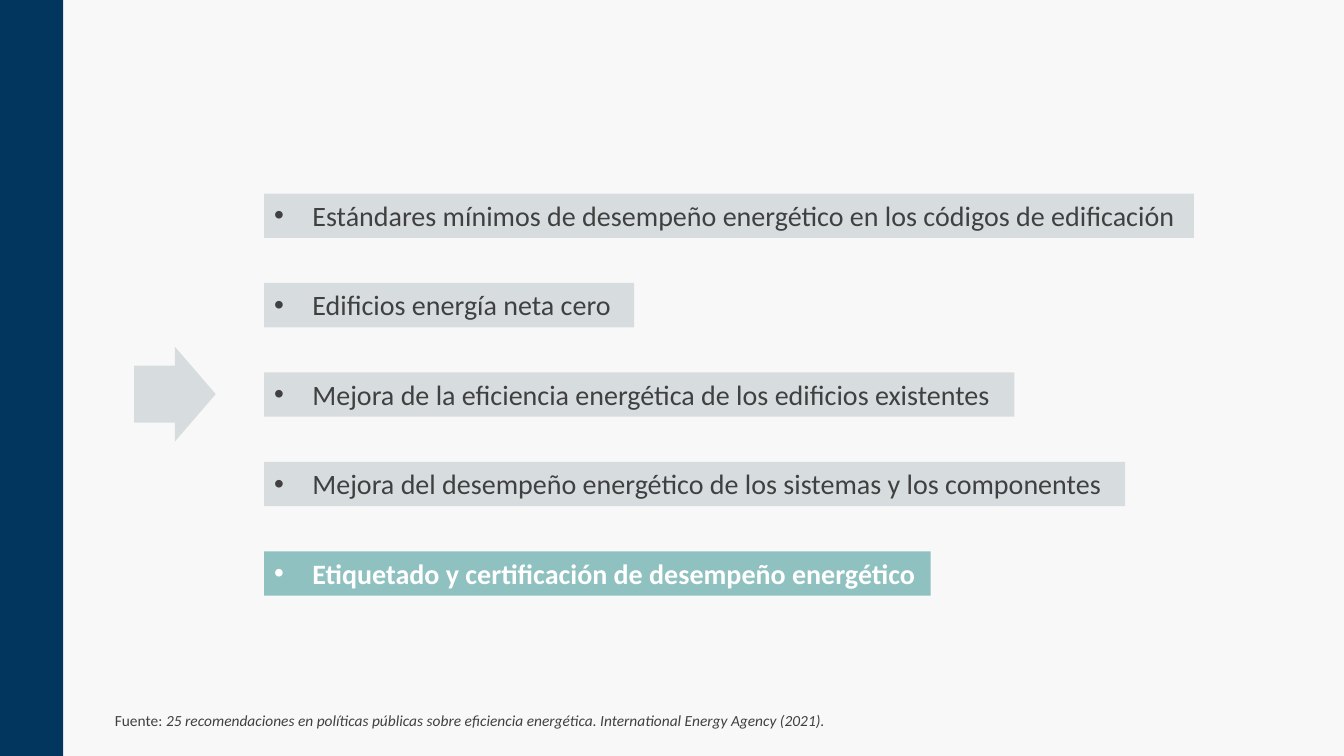
import pptx
import pptx.util
import pptx.dml.color
import pptx.enum.shapes
import pptx.enum.text
import pptx.oxml.ns
import lxml.etree

Inches = pptx.util.Inches
RGBColor = pptx.dml.color.RGBColor
Shapes = pptx.enum.shapes.MSO_SHAPE

NAVY = RGBColor(0x03, 0x36, 0x5E)
PALE = RGBColor(0xF8, 0xF8, 0xF8)
GREY = RGBColor(0xD7, 0xDD, 0xDF)
TEAL = RGBColor(0x8E, 0xC1, 0xC0)
DARK = RGBColor(0x40, 0x40, 0x40)
WHITE = RGBColor(0xFF, 0xFF, 0xFF)

PAGE_WIDTH, PAGE_HEIGHT = 13.33, 7.5
BAR_HEIGHT = 0.44
INDENT = 0.38

# Text and bar width of each measure; the last one is highlighted
MEASURES = [
    ("Estándares mínimos de desempeño energético en los códigos de edificación", 9.22),
    ("Edificios energía neta cero", 3.67),
    ("Mejora de la eficiencia energética de los edificios existentes", 7.44),
    ("Mejora del desempeño energético de los sistemas y los componentes", 8.54),
    ("Etiquetado y certificación de desempeño energético", 6.61),
]
SOURCE = [
    ("Fuente: ", False),
    ("25 recomendaciones en políticas públicas sobre eficiencia energética. "
     "International Energy Agency (2021).", True),
]


def add_block(page, kind, box, color):
    block = page.shapes.add_shape(kind, *map(Inches, box))
    block.shadow.inherit = False
    block.fill.solid()
    block.fill.fore_color.rgb = color
    block.line.fill.background()
    return block


def add_span(para, text, color, **formats):
    span = para.add_run()
    span.text = text
    span.font.color.rgb = color
    for name, value in {"name": "Calibri", **formats}.items():
        setattr(span.font, name, value)


def add_bullet(para):
    props = para._p.get_or_add_pPr()
    props.set("marL", str(Inches(INDENT)))
    props.set("indent", str(-Inches(INDENT)))
    for tag, key, value in [("a:buFont", "typeface", "Arial"), ("a:buChar", "char", "•")]:
        lxml.etree.SubElement(props, pptx.oxml.ns.qn(tag)).set(key, value)


def draw_background(page, box):
    left, top, width, height = box
    band = 0.63
    add_block(page, Shapes.RECTANGLE, (left, top, band, height), NAVY)
    add_block(page, Shapes.RECTANGLE, (left + band, top, width - band, height), PALE)


def draw_source(page, box):
    note = page.shapes.add_textbox(*map(Inches, box))
    note.text_frame.word_wrap = True
    para = note.text_frame.paragraphs[0]
    for text, italic in SOURCE:
        add_span(para, text, DARK, size=pptx.util.Pt(11), italic=italic)


def draw_measures(page, box):
    left, top, _, height = box
    step = (height - BAR_HEIGHT) / (len(MEASURES) - 1)
    for index, (text, width) in enumerate(MEASURES):
        active = index == len(MEASURES) - 1
        bar = add_block(page, Shapes.RECTANGLE,
                        (left, top + index * step, width, BAR_HEIGHT),
                        TEAL if active else GREY)
        frame = bar.text_frame
        frame.word_wrap = True
        frame.vertical_anchor = pptx.enum.text.MSO_ANCHOR.TOP
        para = frame.paragraphs[0]
        para.alignment = pptx.enum.text.PP_ALIGN.LEFT
        add_bullet(para)
        add_span(para, text, WHITE if active else DARK,
                 size=pptx.util.Pt(20), bold=active)


def draw_arrow(page, box):
    arrow = add_block(page, Shapes.RIGHT_ARROW, box, GREY)
    arrow.adjustments[0] = 0.6
    arrow.adjustments[1] = 0.5


def main():
    deck = pptx.Presentation()
    deck.slide_width = Inches(PAGE_WIDTH)
    deck.slide_height = Inches(PAGE_HEIGHT)
    page = deck.slides.add_slide(deck.slide_layouts[6])
    draw_background(page, (0, 0, PAGE_WIDTH, PAGE_HEIGHT))
    draw_source(page, (1.04, 7.01, 11.82, 0.29))
    draw_measures(page, (2.62, 1.92, 9.22, 3.99))
    draw_arrow(page, (1.33, 3.44, 0.81, 0.94))
    deck.save("out.pptx")


if __name__ == "__main__":
    main()
